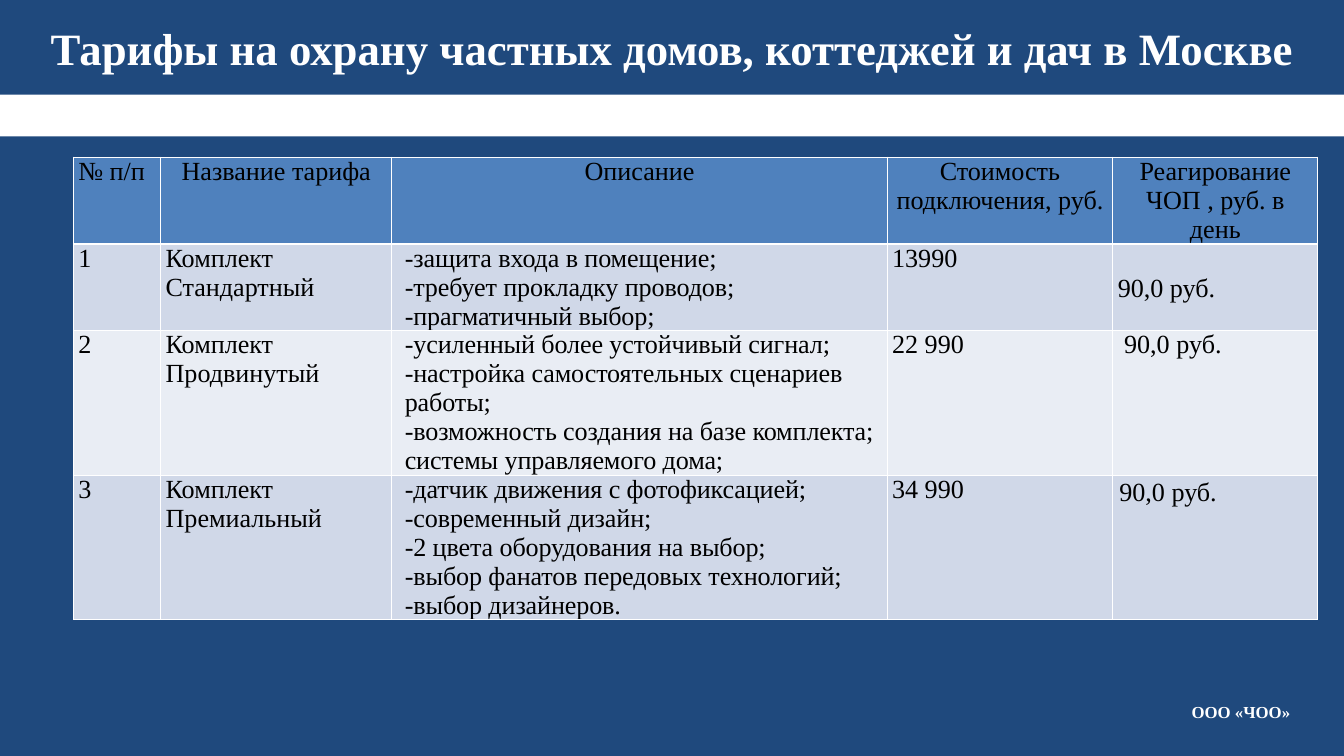
from dataclasses import dataclass
from itertools import product

from lxml import etree
from pptx import Presentation
from pptx import util as u
from pptx.dml.color import RGBColor
from pptx.enum import shapes, text
from pptx.oxml.ns import qn

HUES = {"navy": "1F497D", "head": "4F81BD", "odd": "D0D8E8",
        "even": "E9EDF4", "white": "FFFFFF", "black": "000000"}
WIDE, HIGH = 50.8, 28.58
COLS = (3.3, 8.74, 18.72, 8.53, 7.75)
ROWS = (2.16, 3.02, 3.84, 5.26)
LEFT, MID, RIGHT = (text.PP_ALIGN.LEFT, text.PP_ALIGN.CENTER,
                    text.PP_ALIGN.RIGHT)
BODY = {"name": "Times New Roman", "size": u.Pt(28)}
BOLD = {"name": "Times New Roman", "bold": True}
HEADS = ("№ п/п", "Название тарифа", "Описание",
         "Стоимость подключения, руб.", "Реагирование\vЧОП , руб. в день")


@dataclass
class Plan:
    name: str
    notes: tuple[str, ...]
    cost: str
    left: float  # insets of the daily fee, cm
    top: float
    fee: str = "90,0 руб."


PLANS = (
    Plan("Комплект Стандартный",
         ("-защита входа в помещение;", "-требует прокладку проводов;",
          "-прагматичный выбор;"), "13990", 0.19, 1.13),
    Plan("Комплект Продвинутый",
         ("-усиленный более устойчивый сигнал;",
          "-настройка самостоятельных сценариев работы;",
          "-возможность создания на базе комплекта; "
          "системы управляемого дома;"), "22 990", 0.43, 0),
    Plan("Комплект Премиальный",
         ("-датчик движения с фотофиксацией;", "-современный дизайн;",
          "-2 цвета оборудования на выбор;",
          "-выбор фанатов передовых технологий;", "-выбор дизайнеров."),
         "34 990", 0.25, 0.13),
)


def color(key: str) -> RGBColor:
    return RGBColor.from_string(HUES[key])


def write(frame, lines: tuple[str, ...], look: dict, hue: str, align) -> None:
    for i, line in enumerate(lines):
        para = frame.paragraphs[0] if i == 0 else frame.add_paragraph()
        para.text, para.alignment = line, align
        for run in para.runs:
            for key, val in look.items():
                setattr(run.font, key, val)
            run.font.color.rgb = color(hue)


def panel(slide, top: float, high: float):
    box = slide.shapes.add_shape(shapes.MSO_SHAPE.RECTANGLE, 0, u.Cm(top),
                                 u.Cm(WIDE), u.Cm(high))
    box.shadow.inherit = False
    box.fill.solid()
    box.fill.fore_color.rgb = color("navy")
    box.line.fill.background()
    return box


def edge(cell, row: int) -> None:
    """Draw white cell borders, thicker where header meets body."""
    props = cell._tc.get_or_add_tcPr()
    for side in "LRTB":
        thick = (row, side) in ((0, "B"), (1, "T"))
        line = etree.SubElement(props, qn(f"a:ln{side}"),
                                w=str(u.Pt(3 if thick else 1)))
        fill = etree.SubElement(line, qn("a:solidFill"))
        etree.SubElement(fill, qn("a:srgbClr"), val=HUES["white"])


def indent(frame) -> None:
    """Inset the description lines and tighten their letters."""
    for para in frame.paragraphs:
        para._p.get_or_add_pPr().set("marL", str(u.Cm(0.3)))
        for run in para.runs:
            run._r.get_or_add_rPr().set("spc", "-10")


def tariffs(slide) -> None:
    table = slide.shapes.add_table(len(ROWS), len(COLS), u.Cm(2.77),
                                   u.Cm(5.94), u.Cm(sum(COLS)),
                                   u.Cm(sum(ROWS))).table
    for col, wide in zip(table.columns, COLS):
        col.width = u.Cm(wide)
    for row, high in zip(table.rows, ROWS):
        row.height = u.Cm(high)
    grid = [[(head,) for head in HEADS]]
    for num, plan in enumerate(PLANS, 1):
        grid.append([(str(num),), (plan.name,), plan.notes,
                     (plan.cost,), (plan.fee,)])
    for r, c in product(range(len(ROWS)), range(len(COLS))):
        cell = table.cell(r, c)
        left, top = 0.19, 0
        if r and c == len(COLS) - 1:
            left, top = PLANS[r - 1].left, PLANS[r - 1].top
        pads = {"margin_left": left, "margin_right": 0.19,
                "margin_top": top, "margin_bottom": 0}
        for key, val in pads.items():
            setattr(cell, key, u.Cm(val))
        edge(cell, r)
        cell.fill.solid()
        band = "odd" if r % 2 else "even"
        cell.fill.fore_color.rgb = color(band if r else "head")
        write(cell.text_frame, grid[r][c], BODY, "black",
              MID if r == 0 and c else LEFT)
        if r and c == 2:
            indent(cell.text_frame)


def main() -> None:
    deck = Presentation()
    deck.slide_width, deck.slide_height = u.Cm(WIDE), u.Cm(HIGH)
    slide = deck.slides.add_slide(deck.slide_layouts[6])

    title = panel(slide, 0, 3.58).text_frame
    title.vertical_anchor = text.MSO_ANCHOR.MIDDLE
    write(title, ("Тарифы на охрану частных домов, коттеджей и дач в Москве",),
          BOLD | {"size": u.Pt(48)}, "white", MID)
    panel(slide, 5.16, HIGH - 5.16)
    tariffs(slide)

    firm = slide.shapes.add_textbox(u.Cm(44.73), u.Cm(26.39), u.Cm(4.29),
                                    u.Cm(1.02)).text_frame
    firm.word_wrap = False
    firm.auto_size = text.MSO_AUTO_SIZE.SHAPE_TO_FIT_TEXT
    write(firm, ("ООО «ЧОО»",), BOLD | {"size": u.Pt(18)}, "white", RIGHT)
    deck.save("out.pptx")


if __name__ == "__main__":
    main()
